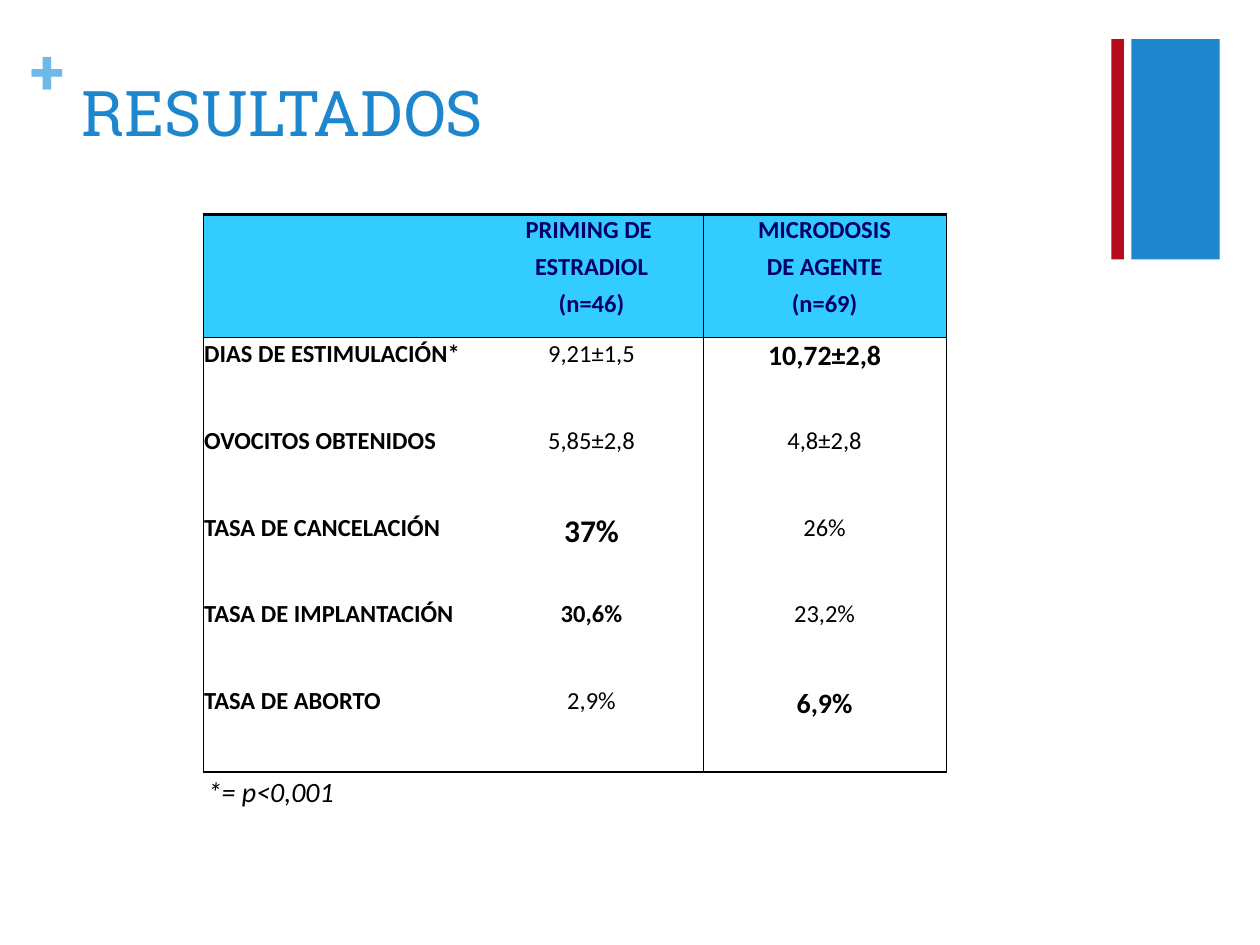
from dataclasses import dataclass

from lxml import etree
from pptx import Presentation
from pptx.dml.color import RGBColor
from pptx.enum.shapes import MSO_SHAPE
from pptx.enum.text import MSO_ANCHOR, MSO_AUTO_SIZE, PP_ALIGN
from pptx.oxml.ns import qn
from pptx.util import Inches, Pt

RECTANGLE = MSO_SHAPE.RECTANGLE
TOP = MSO_ANCHOR.TOP
NO_FIT = MSO_AUTO_SIZE.NONE
LEFT, CENTER = PP_ALIGN.LEFT, PP_ALIGN.CENTER


@dataclass(frozen=True)
class Theme:
    """Colours, fonts and type sizes of the deck."""
    blue: str = "1D86CD"
    light_blue: str = "6EB8EA"
    red: str = "B50B1B"
    cyan: str = "33CCFF"
    navy: str = "000066"
    black: str = "000000"
    white: str = "FFFFFF"
    heading_font: str = "Roboto Slab"
    body_font: str = "Calibri"
    title_size: int = 36
    cell_size: int = 14
    note_size: int = 16
    strong_size: int = 18


THEME = Theme()
HEADERS = [[], ["PRIMING DE ", "ESTRADIOL", "(n=46)"],
           ["MICRODOSIS", "DE AGENTE", "(n=69)"]]
RESULTS = [
    ("DIAS DE ESTIMULACIÓN*", "9,21±1,5", "10,72±2,8"),
    ("OVOCITOS OBTENIDOS", "5,85±2,8", "4,8±2,8"),
    ("TASA DE CANCELACIÓN", "37%", "26%"),
    ("TASA DE IMPLANTACIÓN", "30,6%", "23,2%"),
    ("TASA DE ABORTO", "2,9%", "6,9%"),
]
HIGHLIGHTS = {
    "10,72±2,8": THEME.note_size,
    "37%": THEME.strong_size,
    "30,6%": THEME.cell_size,
    "6,9%": THEME.note_size,
}
COLUMN_WIDTHS = (2.2, 1.77, 1.93)
HEADER_HEIGHT, ROW_HEIGHT = 0.98, 0.69
HAIRLINE, THIN, THICK = 0.25, 1, 2


def write_span(para, text, color, **font_values):
    """Add a run of text with the given font values."""
    span = para.add_run()
    span.text = text
    for name, value in font_values.items():
        setattr(span.font, name, value)
    span.font.color.rgb = RGBColor.from_string(color)


def set_insets(target, inset):
    """Give a text frame or cell equal margins."""
    for side in ("left", "right", "top", "bottom"):
        setattr(target, f"margin_{side}", Inches(inset))


def add_text(page, box, inset, text, color, **font_values):
    """Place a one-line text box."""
    frame = page.shapes.add_textbox(*map(Inches, box)).text_frame
    frame.word_wrap = False
    set_insets(frame, inset)
    write_span(frame.paragraphs[0], text, color, **font_values)


def add_bars(page, box):
    """Place the red and blue bars in the corner."""
    left, top, width, height = box
    bars = ((left, 0.1, THEME.red), (left + width - 0.7, 0.7, THEME.blue))
    for bar_left, bar_width, color in bars:
        bar = page.shapes.add_shape(
            RECTANGLE, *map(Inches, (bar_left, top, bar_width, height)))
        bar.shadow.inherit = False
        bar.fill.solid()
        bar.fill.fore_color.rgb = RGBColor.from_string(color)
        bar.line.fill.background()


def place_title(page, box, text):
    """Move and format the title placeholder."""
    title = page.shapes.title
    title.left, title.top, title.width, title.height = map(Inches, box)
    frame = title.text_frame
    formats = {"vertical_anchor": TOP, "auto_size": NO_FIT, "word_wrap": True}
    for name, value in formats.items():
        setattr(frame, name, value)
    para = frame.paragraphs[0]
    para.alignment = LEFT
    write_span(para, text, THEME.blue, name=THEME.heading_font,
               size=Pt(THEME.title_size))


def set_borders(cell, widths):
    """Draw the listed sides in black and hide the others."""
    properties = cell._tc.get_or_add_tcPr()
    for index, side in enumerate("LRTB"):
        width = widths.get(side)
        line = etree.Element(qn(f"a:ln{side}"), w=str(int(Pt(width or 0))))
        if width:
            fill = etree.SubElement(line, qn("a:solidFill"))
            etree.SubElement(fill, qn("a:srgbClr"), val=THEME.black)
        else:
            etree.SubElement(line, qn("a:noFill"))
        properties.insert(index, line)


def border_widths(row, column):
    """Return the border widths for a cell position."""
    widths = {}
    if column != 1:
        widths["L"] = HAIRLINE
    if column != 0:
        widths["R"] = HAIRLINE
    if row == 0:
        widths.update(T=THICK, B=HAIRLINE)
    elif row == 1:
        widths["T"] = HAIRLINE
    elif row == len(RESULTS):
        widths["B"] = THIN
    return widths


def fill_cell(cell, lines, fill, color, alignment, bold, size):
    """Write the lines of a cell and set its fill."""
    set_insets(cell, 0.01)
    cell.fill.solid()
    cell.fill.fore_color.rgb = RGBColor.from_string(fill)
    for index, line in enumerate(lines):
        frame = cell.text_frame
        para = frame.add_paragraph() if index else frame.paragraphs[0]
        para.alignment = alignment
        para.space_before = Pt(4)
        write_span(para, line, color, name=THEME.body_font, size=Pt(size),
                   bold=bold)


def add_results(page, box):
    """Place the table that compares both treatments."""
    table = page.shapes.add_table(
        len(RESULTS) + 1, len(COLUMN_WIDTHS), *map(Inches, box)).table
    table.first_row = table.horz_banding = False
    for column, width in zip(table.columns, COLUMN_WIDTHS):
        column.width = Inches(width)
    for index, row in enumerate(table.rows):
        row.height = Inches(ROW_HEIGHT if index else HEADER_HEIGHT)
    for column, lines in enumerate(HEADERS):
        fill_cell(table.cell(0, column), lines, THEME.cyan, THEME.navy,
                  CENTER, True, THEME.cell_size)
    for row, values in enumerate(RESULTS, start=1):
        for column, text in enumerate(values):
            fill_cell(table.cell(row, column), [text], THEME.white,
                      THEME.black, CENTER if column else LEFT,
                      column == 0 or text in HIGHLIGHTS,
                      HIGHLIGHTS.get(text, THEME.cell_size))
    for row in range(len(RESULTS) + 1):
        for column in range(len(COLUMN_WIDTHS)):
            set_borders(table.cell(row, column), border_widths(row, column))


def main():
    """Build and save the results slide."""
    deck = Presentation()
    deck.slide_width, deck.slide_height = Inches(10), Inches(7.5)
    page = deck.slides.add_slide(deck.slide_layouts[5])
    add_bars(page, (8.82, 0.31, 0.86, 1.75))
    add_text(page, (0.24, 0.25, 0.28, 0.61), 0, "+", THEME.light_blue,
             name=THEME.heading_font, size=Pt(THEME.title_size), bold=True)
    place_title(page, (0.55, 0.53, 8.26, 1.22), "RESULTADOS")
    add_results(page, (1.61, 1.7, 5.9, 4.44))
    add_text(page, (1.61, 6.11, 1.26, 0.39), 0.04, "*= p<0,001", THEME.black,
             name=THEME.body_font, size=Pt(THEME.note_size), italic=True)
    deck.save("out.pptx")


if __name__ == "__main__":
    main()
